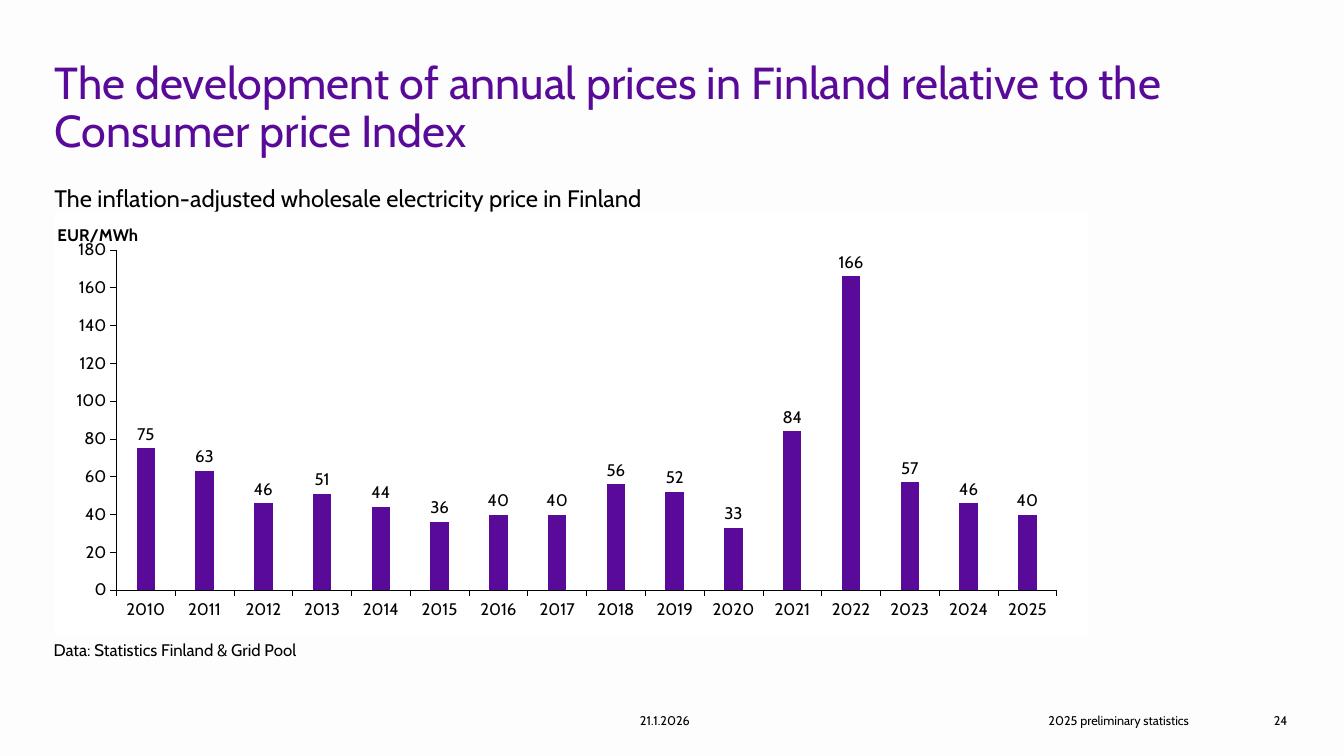
import lxml.etree
import pptx
import pptx.chart.data
import pptx.dml.color
import pptx.enum.chart
import pptx.enum.text
import pptx.oxml.ns
import pptx.util

qn = pptx.oxml.ns.qn
Pt = pptx.util.Pt
RGB = pptx.dml.color.RGBColor.from_string
ALIGN = pptx.enum.text.PP_ALIGN
ANCHOR = pptx.enum.text.MSO_ANCHOR

theme = dict(
    font="Cabin", accent="590A99", ink="000000", paper="FEFDFD", panel="FFFFFF",
    title=32, subtitle=17, label=12, footer=9,
)

prs = pptx.Presentation()
prs.slide_width = pptx.util.Inches(13.33)
prs.slide_height = pptx.util.Inches(7.5)
COL, ROW = prs.slide_width / 100, prs.slide_height / 100
s = prs.slides.add_slide(prs.slide_layouts[3])
s.background.fill.solid()
s.background.fill.fore_color.rgb = RGB(theme["paper"])


def grid(col, row, cols, rows):
    return [int(v) for v in (col * COL, row * ROW, cols * COL, rows * ROW)]


def put_text(text, *, sp, at, size, color="ink", align=ALIGN.LEFT,
             anchor=ANCHOR.TOP, spacing=1.0, left=0, right=0.1):
    sp.left, sp.top, sp.width, sp.height = grid(*at)
    tf = sp.text_frame
    tf.word_wrap = True
    tf.auto_size = pptx.enum.text.MSO_AUTO_SIZE.NONE
    tf.vertical_anchor = anchor
    tf.margin_left, tf.margin_right = pptx.util.Inches(left), pptx.util.Inches(right)
    tf.margin_top = tf.margin_bottom = pptx.util.Inches(0.05)
    p = tf.paragraphs[0]
    p.alignment, p.line_spacing, p.space_before = align, spacing, Pt(0)
    pPr = p._p.get_or_add_pPr()
    pPr.set("marL", "0")
    pPr.set("indent", "0")
    lxml.etree.SubElement(pPr, qn("a:buNone"))
    r = p.add_run()
    r.text = text
    r.font.name, r.font.size = theme["font"], Pt(theme[size])
    r.font.color.rgb = RGB(theme[color])


def set_layout(parent, index, **values):
    for old in parent.findall(qn("c:layout")):
        parent.remove(old)
    layout = lxml.etree.Element(qn("c:layout"))
    manual = lxml.etree.SubElement(layout, qn("c:manualLayout"))
    for tag, value in values.items():
        lxml.etree.SubElement(manual, qn(f"c:{tag}")).set("val", str(value))
    parent.insert(index, layout)


put_text("The development of annual prices in Finland relative to the Consumer price Index",
         sp=s.shapes.title, at=(4.05, 7.33, 91.75, 14.53), size="title",
         color="accent", spacing=0.9)
put_text("The inflation-adjusted wholesale electricity price in Finland",
         sp=s.placeholders[1], at=(4.05, 24, 62.49, 4), size="subtitle", spacing=0.9)
put_text("Data: Statistics Finland & Grid Pool",
         sp=s.placeholders[2], at=(3.98, 84.27, 62.49, 3.07), size="label", spacing=0.9)

footers = [
    ("21.1.2026", 45.31, 8.33, ALIGN.CENTER, 0),
    ("2025 preliminary statistics", 55.44, 33.01, ALIGN.RIGHT, 0.1),
    ("24", 90.17, 5.63, ALIGN.RIGHT, 0.1),
]
for text, col, cols, align, left in footers:
    at = (col, 92.67, cols, 5.33)
    put_text(text, sp=s.shapes.add_textbox(*grid(*at)), at=at, size="footer",
             align=align, anchor=ANCHOR.MIDDLE, left=left, right=0)

data = pptx.chart.data.CategoryChartData()
data.categories = [str(year) for year in range(2010, 2026)]
data.add_series("Series 1", [75, 63, 46, 51, 44, 36, 40, 40, 56, 52, 33, 84, 166, 57, 46, 40])
chart = s.shapes.add_chart(pptx.enum.chart.XL_CHART_TYPE.COLUMN_CLUSTERED,
                           *grid(4.05, 28, 76.89, 56.27), data).chart
chart.has_legend = False
chart.has_title = False
plot = chart.plots[0]
plot.gap_width, plot.overlap, plot.vary_by_categories = 219, -27, False
bars = plot.series[0]
bars.format.fill.solid()
bars.format.fill.fore_color.rgb = RGB(theme["accent"])
bars.invert_if_negative = False

labels = bars.data_labels
labels.show_value = True
labels.position = pptx.enum.chart.XL_LABEL_POSITION.OUTSIDE_END
labels.number_format, labels.number_format_is_linked = "#,##0", False

years, prices = chart.category_axis, chart.value_axis
for axis in (years, prices):
    axis.has_major_gridlines = False
    axis.major_tick_mark = pptx.enum.chart.XL_TICK_MARK.OUTSIDE
    axis.minor_tick_mark = pptx.enum.chart.XL_TICK_MARK.NONE
    axis.format.line.width = Pt(0.5)
    axis.format.line.color.rgb = RGB(theme["ink"])
prices.minimum_scale, prices.maximum_scale, prices.major_unit = 0, 180, 20
prices.tick_labels.number_format = "0"
prices.tick_labels.number_format_is_linked = False

tf = prices.axis_title.text_frame
tf.text = "EUR/MWh"
tf._txBody.bodyPr.set("rot", "0")
tf._txBody.bodyPr.set("vert", "horz")
unit = tf.paragraphs[0].runs[0].font
unit.bold = True
for font in (chart.font, labels.font, years.tick_labels.font, prices.tick_labels.font, unit):
    font.name, font.size = theme["font"], Pt(theme["label"])
    font.color.rgb = RGB(theme["ink"])

plot_area = chart.element.find(".//" + qn("c:plotArea"))
set_layout(plot_area, 0, layoutTarget="inner", xMode="edge", yMode="edge",
           x=0.06, y=0.09, w=0.91, h=0.8)
set_layout(plot_area.find(".//" + qn("c:title")), 1,
           xMode="edge", yMode="edge", x=0, y=0.02)

panel = lxml.etree.Element(qn("c:spPr"))
fill = lxml.etree.SubElement(panel, qn("a:solidFill"))
lxml.etree.SubElement(fill, qn("a:srgbClr")).set("val", theme["panel"])
line = lxml.etree.SubElement(panel, qn("a:ln"))
lxml.etree.SubElement(line, qn("a:noFill"))
chart.element.find(qn("c:txPr")).addprevious(panel)

prs.save("out.pptx")
